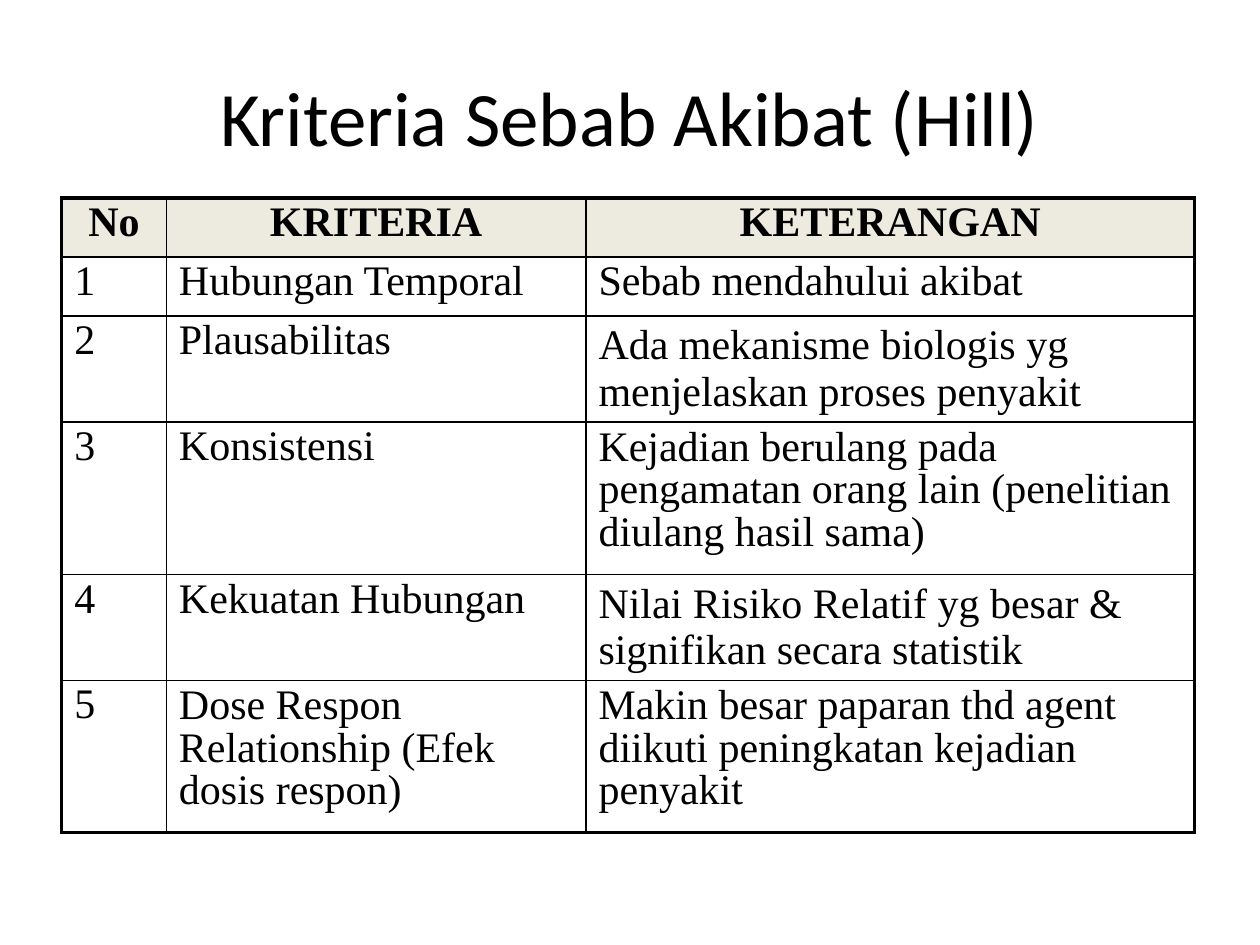
from lxml import etree
from pptx import Presentation
from pptx.dml.color import RGBColor
from pptx.enum.text import PP_ALIGN
from pptx.oxml.ns import qn
from pptx.util import Inches, Pt

CENTER, LEFT = PP_ALIGN.CENTER, PP_ALIGN.LEFT
BLACK, HEADER_FILL = "000000", "EDEBE0"
OUTER_LINE, INNER_LINE = 2.25, 1
COLUMN_WIDTHS = [0.83, 3.33, 4.83]
ROW_HEIGHTS = [0.47, 0.47, 0.84, 1.21, 0.84, 1.21]
TABLE_LEFT, TABLE_TOP = 0.49, 1.57

# Top margin (inches), space before (points), line spacing
SINGLE = (0.01, 0.9, 1.0)
TWO_LINES = (0.05, 3.7, Pt(26.5))
THREE_LINES = (0.04, 3.2, 0.92)

HEADERS = ["No", "KRITERIA", "KETERANGAN"]
CRITERIA = [
    ("Hubungan Temporal", SINGLE, "Sebab mendahului akibat", SINGLE),
    ("Plausabilitas", SINGLE,
     "Ada mekanisme biologis yg menjelaskan proses penyakit", TWO_LINES),
    ("Konsistensi", SINGLE,
     "Kejadian berulang pada pengamatan orang lain (penelitian diulang hasil sama)",
     THREE_LINES),
    ("Kekuatan Hubungan", SINGLE,
     "Nilai Risiko Relatif yg besar & signifikan secara statistik", TWO_LINES),
    ("Dose Respon Relationship (Efek dosis respon)", THREE_LINES,
     "Makin besar paparan thd agent diikuti peningkatan kejadian penyakit",
     THREE_LINES),
]


def color(value):
    return RGBColor.from_string(value)


def style_paragraph(paragraph, font_name, size, alignment, bold=False):
    paragraph.alignment = alignment
    paragraph.font.name = font_name
    paragraph.font.size = Pt(size)
    paragraph.font.bold = bold
    paragraph.font.color.rgb = color(BLACK)


def add_title(slide, text, slide_width):
    box = slide.shapes.add_textbox(int(slide_width * 0.1), Inches(0.54),
                                   int(slide_width * 0.8), Inches(0.76))
    frame = box.text_frame
    frame.word_wrap = True
    frame.margin_left = frame.margin_right = frame.margin_bottom = 0
    frame.margin_top = Inches(0.01)
    frame.text = text
    style_paragraph(frame.paragraphs[0], "Calibri", 44, CENTER)


def set_borders(cell, row, column):
    """Draw thick lines on the table's outline and thin ones inside."""
    on_outline = {
        "a:lnL": column == 0,
        "a:lnR": column == len(COLUMN_WIDTHS) - 1,
        "a:lnT": row == 0,
        "a:lnB": row == len(ROW_HEIGHTS) - 1,
    }
    properties = cell._tc.get_or_add_tcPr()
    for tag, is_outer in on_outline.items():
        width = Pt(OUTER_LINE if is_outer else INNER_LINE)
        line = etree.SubElement(properties, qn(tag), w=str(width))
        fill = etree.SubElement(line, qn("a:solidFill"))
        etree.SubElement(fill, qn("a:srgbClr"), val=BLACK)


def fill_cell(cell, text, layout, is_header):
    top, space_before, line_spacing = layout
    cell.margin_left = cell.margin_right = Inches(0.1)
    cell.margin_top, cell.margin_bottom = Inches(top), 0
    cell.text = text
    paragraph = cell.text_frame.paragraphs[0]
    style_paragraph(paragraph, "Times New Roman", 24,
                    CENTER if is_header else LEFT, is_header)
    paragraph.space_before = Pt(space_before)
    paragraph.line_spacing = line_spacing
    if is_header:
        cell.fill.solid()
        cell.fill.fore_color.rgb = color(HEADER_FILL)
    else:
        cell.fill.background()


def add_criteria_table(slide):
    table = slide.shapes.add_table(
        len(ROW_HEIGHTS), len(COLUMN_WIDTHS), Inches(TABLE_LEFT), Inches(TABLE_TOP),
        Inches(sum(COLUMN_WIDTHS)), Inches(sum(ROW_HEIGHTS))).table
    table.first_row = table.horz_banding = False
    for column, width in zip(table.columns, COLUMN_WIDTHS):
        column.width = Inches(width)
    for row, height in zip(table.rows, ROW_HEIGHTS):
        row.height = Inches(height)

    rows = [[(header, SINGLE) for header in HEADERS]]
    for number, (name, name_layout, note, note_layout) in enumerate(CRITERIA, 1):
        rows.append([(str(number), SINGLE), (name, name_layout), (note, note_layout)])
    for row, entries in enumerate(rows):
        for column, (text, layout) in enumerate(entries):
            cell = table.cell(row, column)
            set_borders(cell, row, column)
            fill_cell(cell, text, layout, row == 0)


def main():
    presentation = Presentation()
    presentation.slide_width = Inches(10)
    presentation.slide_height = Inches(7.5)
    slide = presentation.slides.add_slide(presentation.slide_layouts[6])
    add_title(slide, "Kriteria Sebab Akibat (Hill)", presentation.slide_width)
    add_criteria_table(slide)
    presentation.save("out.pptx")


if __name__ == "__main__":
    main()
